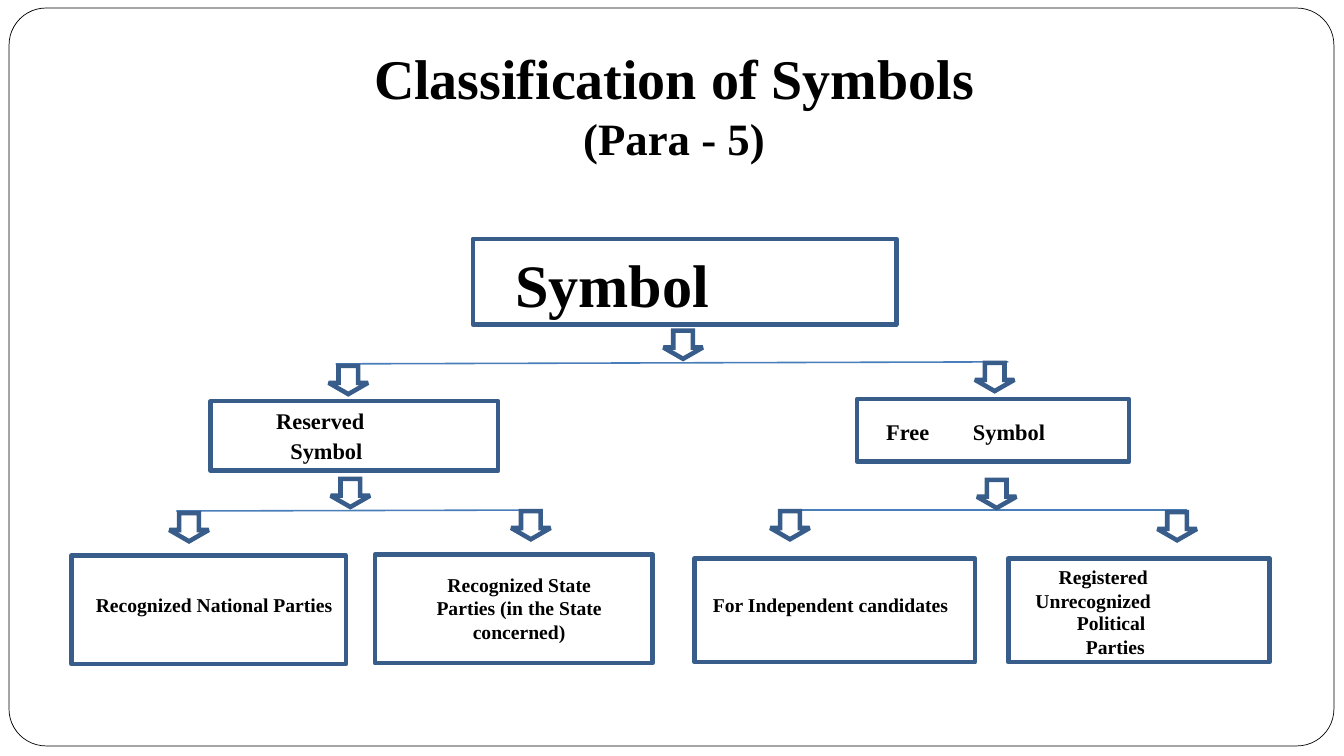
from lxml import etree
from pptx import Presentation
from pptx.dml.color import RGBColor
from pptx.enum.shapes import MSO_CONNECTOR, MSO_SHAPE
from pptx.enum.text import MSO_ANCHOR, PP_ALIGN
from pptx.oxml.ns import qn
from pptx.util import Inches, Pt

RECT, ROUND, DOWN = MSO_SHAPE.RECTANGLE, MSO_SHAPE.ROUNDED_RECTANGLE, MSO_SHAPE.DOWN_ARROW
STRAIGHT = MSO_CONNECTOR.STRAIGHT
LEFT, CENTER = PP_ALIGN.LEFT, PP_ALIGN.CENTER
TOP, BOTTOM = MSO_ANCHOR.TOP, MSO_ANCHOR.BOTTOM

FONT = "Times New Roman"
BLACK, WHITE, BORDER, BRANCH = "000000", "FFFFFF", "385D8A", "4A7EBB"
BORDER_PT, BRANCH_PT = 3.25, 1.13
ARROW_W, ARROW_H = 0.39, 0.28

FRAME = (0.09, 0.08, 13.14, 7.32)
TITLE = [("Classification of Symbols", 40), ("(Para - 5)", 32)]
TITLE_AT = (0.81, 0.55, 11.75, 1.08)

BOXES = [
    (4.69, 2.37, 4.2, 0.85),
    (2.09, 3.98, 2.85, 0.69),
    (8.5, 3.96, 2.7, 0.62),
    (0.71, 5.51, 2.72, 1.08),
    (3.72, 5.5, 2.75, 1.08),
    (6.89, 5.54, 2.78, 1.03),
    (10, 5.54, 2.59, 1.03),
]
LABELS = [
    ("Symbol", 43, (5.11, 2.45, 1.94, 0.72)),
    ("Reserved", 16, (2.74, 4.04, 0.94, 0.27)),
    ("Symbol", 16, (2.88, 4.34, 0.78, 0.27)),
    ("Free", 16, (8.79, 4.15, 0.43, 0.27)),
    ("Symbol", 16, (9.65, 4.15, 0.72, 0.27)),
    ("Recognized National Parties", 14, (0.95, 5.88, 2.42, 0.24)),
    ("For Independent candidates", 14, (7.07, 5.88, 2.35, 0.24)),
    ("Registered", 14, (10.5, 5.6, 0.89, 0.24)),
    ("Unrecognized", 14, (10.27, 5.84, 1.15, 0.24)),
    ("Political", 14, (10.68, 6.06, 0.69, 0.24)),
    ("Parties", 14, (10.77, 6.3, 0.59, 0.24)),
]
STATE_PARTIES = [("Recognized State Parties (in the State concerned)", 14)]
STATE_PARTIES_AT = (4.15, 5.68, 2, 0.71)
BRANCHES = [
    (3.33, 3.61, 10, 3.59),
    (1.75, 5.07, 5.36, 5.06),
    (7.83, 5.06, 11.77, 5.06),
]
ARROWS = [
    (6.58, 3.28), (3.26, 3.63), (9.67, 3.6),
    (3.28, 4.75), (9.69, 4.76),
    (1.68, 5.09), (5.07, 5.07), (7.64, 5.07), (11.48, 5.08),
]


def rgb(color):
    return RGBColor.from_string(color)


def add_outline(s, kind, at, color, width, fill=None):
    sp = s.shapes.add_shape(kind, *map(Inches, at))
    sp.shadow.inherit = False
    if fill:
        sp.fill.solid()
        sp.fill.fore_color.rgb = rgb(fill)
    else:
        sp.fill.background()
    sp.line.color.rgb = rgb(color)
    sp.line.width = Pt(width)
    return sp


def add_text(s, lines, at, align=LEFT, anchor=TOP, wrap=True):
    tf = s.shapes.add_textbox(*map(Inches, at)).text_frame
    tf.word_wrap = wrap
    tf.vertical_anchor = anchor
    tf.margin_left = tf.margin_right = tf.margin_top = tf.margin_bottom = 0
    for i, (text, size) in enumerate(lines):
        p = tf.add_paragraph() if i else tf.paragraphs[0]
        p.text = text
        p.alignment = align
        p.font.name = FONT
        p.font.size = Pt(size)
        p.font.bold = True
        p.font.color.rgb = rgb(BLACK)


def add_arrow(s, x, y):
    sp = add_outline(s, DOWN, (x, y, ARROW_W, ARROW_H), BORDER, BORDER_PT)
    sp.adjustments[0] = 0.5
    sp.adjustments[1] = 0.4
    ln = sp.line._get_or_add_ln()
    etree.SubElement(ln, qn("a:miter")).set("lim", "800000")


def add_branch(s, ends):
    cx = s.shapes.add_connector(STRAIGHT, *map(Inches, ends))
    cx.line.color.rgb = rgb(BRANCH)
    cx.line.width = Pt(BRANCH_PT)
    etree.SubElement(cx._element.spPr, qn("a:effectLst"))


def main():
    """Build the slide that classifies election symbols as a tree."""
    prs = Presentation()
    prs.slide_width, prs.slide_height = Inches(13.33), Inches(7.5)
    s = prs.slides.add_slide(prs.slide_layouts[6])

    add_outline(s, ROUND, FRAME, BLACK, 0.5, WHITE).adjustments[0] = 0.05
    add_text(s, TITLE, TITLE_AT, CENTER, BOTTOM)
    for at in BOXES:
        add_outline(s, RECT, at, BORDER, BORDER_PT)
    for text, size, at in LABELS:
        add_text(s, [(text, size)], at, wrap=False)
    add_text(s, STATE_PARTIES, STATE_PARTIES_AT, CENTER)
    for ends in BRANCHES:
        add_branch(s, ends)
    for x, y in ARROWS:
        add_arrow(s, x, y)
    prs.save("out.pptx")


if __name__ == "__main__":
    main()
